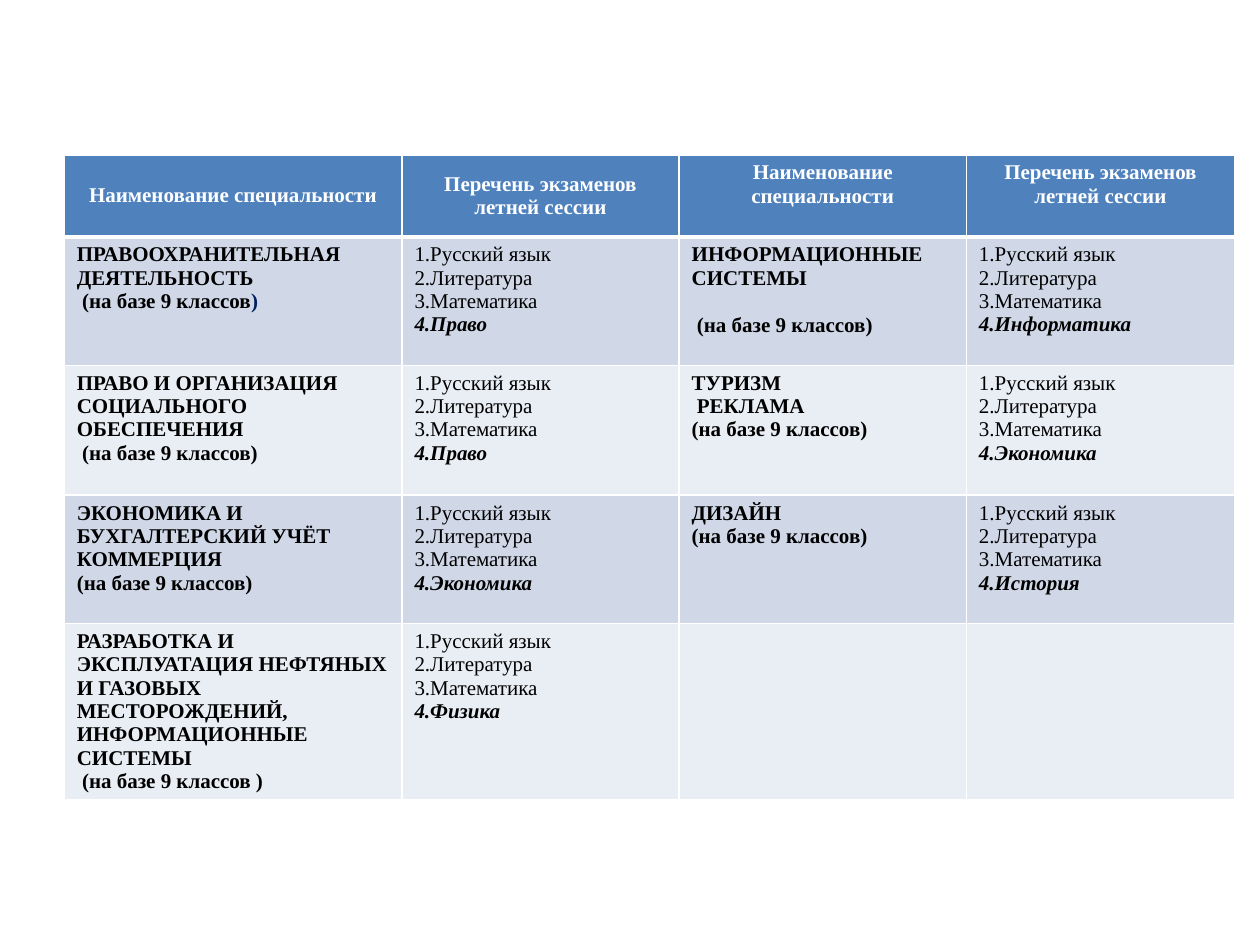
from lxml import etree
from pptx import Presentation
from pptx.dml.color import RGBColor
from pptx.enum.text import MSO_ANCHOR, PP_ALIGN
from pptx.oxml.ns import qn
from pptx.util import Inches, Pt

TOP, MIDDLE = MSO_ANCHOR.TOP, MSO_ANCHOR.MIDDLE
CENTER, LEFT = PP_ALIGN.CENTER, PP_ALIGN.LEFT
COLORS = {"header": "4F81BD", "odd": "D0D8E8", "even": "E9EDF4",
          "white": "FFFFFF", "black": "000000", "navy": "002060"}
COLUMN_WIDTHS = [2.68, 2.2, 2.28, 2.13]
ROW_HEIGHTS = [0.65, 1.02, 1.03, 1.02, 1.39]
HEADERS = ["Наименование специальности", "Перечень экзаменов летней сессии"] * 2
HEADER_ANCHORS = [MIDDLE, MIDDLE, TOP, TOP]
COMMON_EXAMS = ["1.Русский язык", "2.Литература", "3.Математика"]
BASE = "(на базе 9 классов)"
ROWS = [
    (["ПРАВООХРАНИТЕЛЬНАЯ ДЕЯТЕЛЬНОСТЬ", " " + BASE], "4.Право",
     ["ИНФОРМАЦИОННЫЕ СИСТЕМЫ", " " + BASE], "4.Информатика"),
    (["ПРАВО И ОРГАНИЗАЦИЯ СОЦИАЛЬНОГО ОБЕСПЕЧЕНИЯ", " " + BASE], "4.Право",
     ["ТУРИЗМ", " РЕКЛАМА", BASE], "4.Экономика"),
    (["ЭКОНОМИКА И БУХГАЛТЕРСКИЙ УЧЁТ", "КОММЕРЦИЯ", BASE], "4.Экономика",
     ["ДИЗАЙН", BASE], "4.История"),
    (["РАЗРАБОТКА И ЭКСПЛУАТАЦИЯ НЕФТЯНЫХ И ГАЗОВЫХ МЕСТОРОЖДЕНИЙ, "
      "ИНФОРМАЦИОННЫЕ СИСТЕМЫ", " (на базе 9 классов )"], "4.Физика", [], None),
]


def add_span(para, text, color="black", bold=True, italic=False):
    span = para.add_run()
    span.text = text
    formats = {"name": "Times New Roman", "size": Pt(12), "bold": bold, "italic": italic}
    for name, value in formats.items():
        setattr(span.font, name, value)
    span.font.color.rgb = RGBColor.from_string(COLORS[color])


def style_cell(cell, fill, bottom=1):
    properties = cell._tc.get_or_add_tcPr()
    for side, width in {"L": 1, "R": 1, "T": 1, "B": bottom}.items():
        line = etree.SubElement(properties, qn(f"a:ln{side}"), w=str(Pt(width)))
        solid = etree.SubElement(line, qn("a:solidFill"))
        etree.SubElement(solid, qn("a:srgbClr"), val=COLORS["white"])
    cell.fill.solid()
    cell.fill.fore_color.rgb = RGBColor.from_string(COLORS[fill])


deck = Presentation()
deck.slide_width, deck.slide_height = Inches(10), Inches(7.5)
page = deck.slides.add_slide(deck.slide_layouts[6])
table = page.shapes.add_table(
    len(ROW_HEIGHTS), len(COLUMN_WIDTHS), Inches(0.51), Inches(1.23),
    Inches(sum(COLUMN_WIDTHS)), Inches(sum(ROW_HEIGHTS))).table
for column, width in zip(table.columns, COLUMN_WIDTHS):
    column.width = Inches(width)
for row, height in zip(table.rows, ROW_HEIGHTS):
    row.height = Inches(height)

for index, (header, anchor) in enumerate(zip(HEADERS, HEADER_ANCHORS)):
    cell = table.cell(0, index)
    style_cell(cell, "header", bottom=3)
    cell.vertical_anchor = anchor
    para = cell.text_frame.paragraphs[0]
    para.alignment = CENTER
    add_span(para, header, "white")

for row_index, entries in enumerate(ROWS, 1):
    for column_index, entry in enumerate(entries):
        cell = table.cell(row_index, column_index)
        style_cell(cell, "odd" if row_index % 2 else "even")
        is_exams = column_index % 2 == 1
        if is_exams:
            lines = COMMON_EXAMS + [entry] if entry else []
        else:
            lines = entry
        for line_index, line in enumerate(lines):
            frame = cell.text_frame
            para = frame.paragraphs[0] if line_index == 0 else frame.add_paragraph()
            para.alignment = LEFT
            is_special = is_exams and line_index == len(COMMON_EXAMS)
            if (row_index, column_index, line_index) == (1, 0, 1):
                add_span(para, line[:-1])
                add_span(para, line[-1], "navy")
            else:
                add_span(para, line, bold=not is_exams or is_special, italic=is_special)

table.cell(1, 2).text_frame.paragraphs[1].space_before = Pt(13.5)
deck.save("out.pptx")
